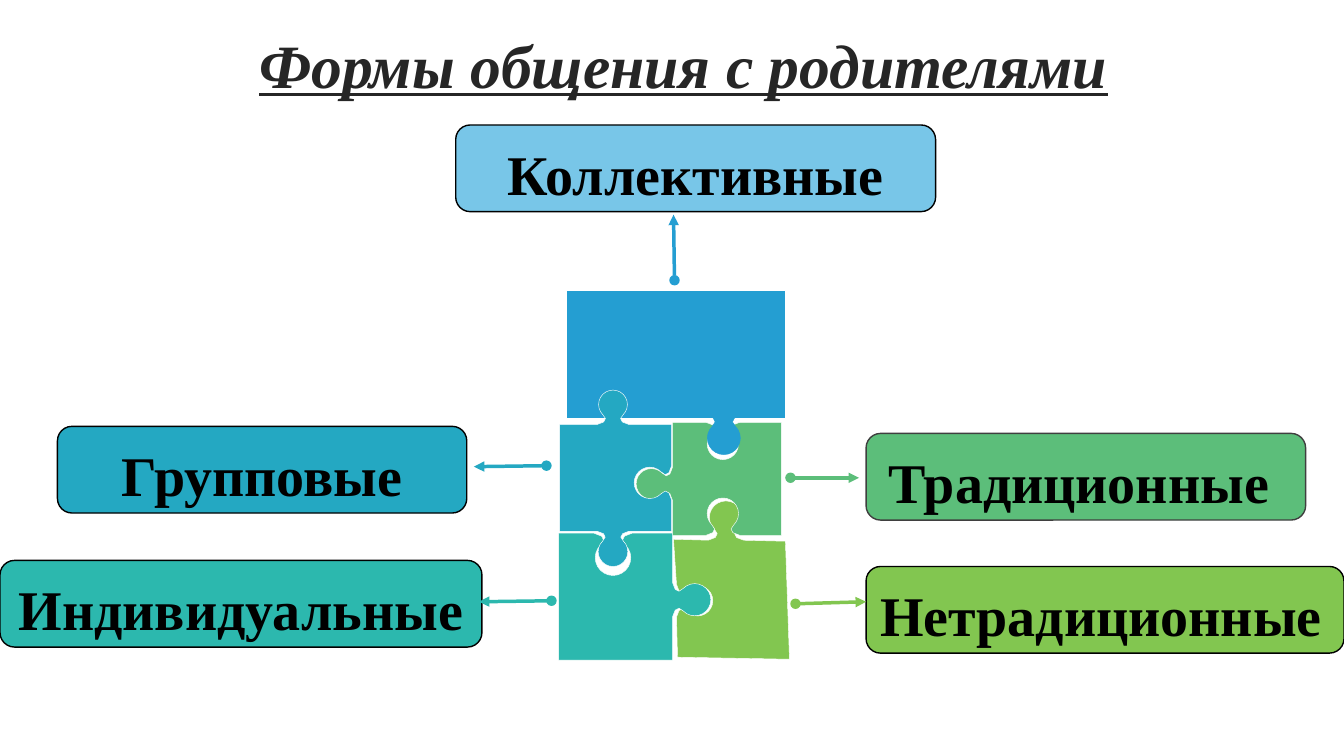
import math
from dataclasses import dataclass

from lxml import etree
from pptx import Presentation
from pptx import util as u
from pptx.dml.color import RGBColor
from pptx.enum import shapes, text
from pptx.oxml.ns import qn

PX = 9144


@dataclass(frozen=True)
class Theme:
    font: str = "Times New Roman"
    title_size: int = 44
    label_size: int = 40
    ink: str = "000000"
    title_ink: str = "262626"
    soft_edge: str = "3F3F3F"
    white: str = "FFFFFF"
    sky: str = "78C6E8"
    blue: str = "249ED2"
    cyan: str = "24A8C2"
    teal: str = "2CB8AE"
    green: str = "5CBE7A"
    lime: str = "82C650"
    edge: float = 1
    seam: float = 0.3
    arrow: float = 2.5


THEME = Theme()
ROUND = shapes.MSO_SHAPE.ROUNDED_RECTANGLE
ALTERNATE = shapes.MSO_SHAPE.FLOWCHART_ALTERNATE_PROCESS
LEFT, CENTER = text.PP_ALIGN.LEFT, text.PP_ALIGN.CENTER

TITLE = ("Формы общения с родителями", (217, 28, 922, 79))

FORMS = [
    ("Групповые", (57, 423, 406, 86), ALTERNATE, THEME.cyan, THEME.ink, CENTER),
    ("Нетрадиционные", (859, 562, 474, 86), ROUND, THEME.lime, THEME.ink, LEFT),
    ("Коллективные", (452, 124, 476, 86), ROUND, THEME.sky, THEME.ink, CENTER),
    ("Традиционные ", (859, 430, 436, 86), ROUND, THEME.green, THEME.soft_edge, CENTER),
    ("Индивидуальные", (0, 556, 478, 86), ALTERNATE, THEME.teal, THEME.ink, CENTER),
]

ARROWS = [
    ((784, 474), (852, 474), THEME.green),
    ((789, 599), (859, 597), THEME.lime),
    ((669, 278), (668, 213), THEME.blue),
    ((542, 462), (470, 463), THEME.cyan),
    ((547, 596), (475, 597), THEME.teal),
]

BLUE_PANEL = (562, 288, 217, 127)

# Corners run clockwise from top left; each tab is (side, x, y, height), negative for a socket.
LOWER_PIECES = [
    (THEME.lime, THEME.white, [(668, 535), (779, 537), (783, 654), (672, 652)],
     [("top", 720, 536, 39), ("left", 671, 596, -36)]),
    (THEME.green, THEME.white, [(667, 419), (775, 419), (775, 531), (667, 531)],
     [("top", 717, 419, -37), ("bottom", 717, 531, -37), ("left", 667, 480, 36)]),
    (THEME.teal, THEME.white, [(554, 529), (667, 529), (667, 655), (554, 655)],
     [("top", 608, 529, -42), ("right", 667, 595, 38)]),
]
UPPER_PIECES = [
    (THEME.cyan, THEME.white, [(555, 421), (666, 421), (666, 527), (555, 527)],
     [("top", 608, 421, 34), ("right", 666, 479, -37), ("bottom", 608, 527, 35)]),
    (THEME.blue, THEME.blue, [(651, 292), (777, 292), (777, 412), (651, 412)],
     [("bottom", 718, 412, 39), ("left", 651, 349, -42)]),
]

SIDES = {"top": (1, 0), "right": (0, 1), "bottom": (-1, 0), "left": (0, -1)}
NECK = [(-0.45, 0), (-0.27, 0.07), (-0.22, 0.17)]
BULB_RADIUS = 0.42
BULB = [(BULB_RADIUS * math.cos(math.radians(angle)),
         1 - BULB_RADIUS + BULB_RADIUS * math.sin(math.radians(angle)))
        for angle in range(225, -46, -15)]
TAB = NECK + BULB + [(-along, out) for along, out in reversed(NECK)]


def emu(lengths):
    return [round(length * PX) for length in lengths]


def paint(part, fill, edge, width):
    part.shadow.inherit = False
    part.fill.solid()
    part.fill.fore_color.rgb = RGBColor.from_string(fill)
    part.line.color.rgb = RGBColor.from_string(edge)
    part.line.width = u.Pt(width)


def write(part, words, *, size, color, align=CENTER, anchor=text.MSO_ANCHOR.TOP,
          italic=False, underline=False, spacing=1.0, before=0, top=5):
    frame = part.text_frame
    frame.word_wrap = True
    frame.vertical_anchor = anchor
    frame.margin_top = top * PX
    line = frame.paragraphs[0]
    line.alignment, line.line_spacing, line.space_before = align, spacing, u.Pt(before)
    run = line.add_run()
    run.text = words
    font = run.font
    font.name, font.size, font.bold = THEME.font, u.Pt(size), True
    font.italic, font.underline = italic, underline
    font.color.rgb = RGBColor.from_string(color)


def tab_points(side, x, y, height):
    dx, dy = SIDES[side]
    size = abs(height)
    return [(x + along * size * dx + out * height * dy,
             y + along * size * dy - out * height * dx) for along, out in TAB]


def add_piece(slide, fill, edge, corners, tabs):
    tab_by_side = {tab[0]: tab for tab in tabs}
    points = []
    for side, corner in zip(SIDES, corners):
        points.append(corner)
        if side in tab_by_side:
            points += tab_points(*tab_by_side[side])
    start, *rest = [tuple(emu(point)) for point in points]
    builder = slide.shapes.build_freeform(*start, scale=1.0)
    builder.add_line_segments(rest, close=True)
    paint(builder.convert_to_shape(), fill, edge, THEME.seam)


def add_arrow(slide, start, end, color):
    arrow = slide.shapes.add_connector(shapes.MSO_CONNECTOR.STRAIGHT, *emu(start + end))
    arrow.line.color.rgb = RGBColor.from_string(color)
    arrow.line.width = u.Pt(THEME.arrow)
    stroke = arrow.line._get_or_add_ln()
    for tag, kind in (("a:headEnd", "oval"), ("a:tailEnd", "triangle")):
        etree.SubElement(stroke, qn(tag), type=kind)
    etree.SubElement(arrow._element.spPr, qn("a:effectLst"))


def main():
    deck = Presentation()
    deck.slide_width, deck.slide_height = emu((1333, 750))
    slide = deck.slides.add_slide(deck.slide_layouts[6])
    for words, box, kind, fill, edge, align in FORMS:
        label = slide.shapes.add_shape(kind, *emu(box))
        paint(label, fill, edge, THEME.edge)
        write(label, words, size=THEME.label_size, color=THEME.ink, align=align, top=10)
    words, box = TITLE
    write(slide.shapes.add_textbox(*emu(box)), words, size=THEME.title_size,
          color=THEME.title_ink, anchor=text.MSO_ANCHOR.MIDDLE, italic=True,
          underline=True, spacing=0.9, before=10)
    for piece in LOWER_PIECES:
        add_piece(slide, *piece)
    panel = slide.shapes.add_shape(shapes.MSO_SHAPE.RECTANGLE, *emu(BLUE_PANEL))
    paint(panel, THEME.blue, THEME.white, THEME.edge)
    for arrow in ARROWS:
        add_arrow(slide, *arrow)
    for piece in UPPER_PIECES:
        add_piece(slide, *piece)
    deck.save("out.pptx")


if __name__ == "__main__":
    main()
